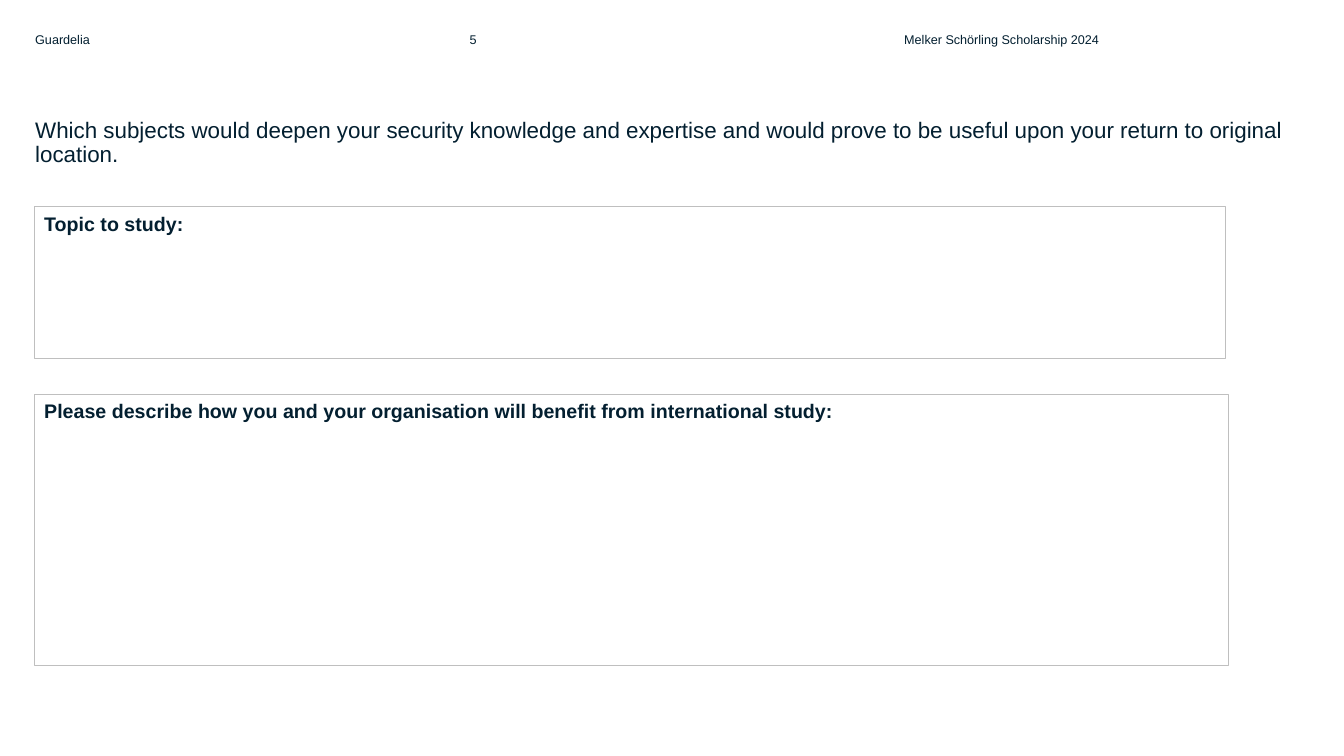
import pptx
import pptx.dml.color
import pptx.enum.shapes
import pptx.enum.text
import pptx.util

COLORS = {"ink": "031F30", "border": "BFBFBF"}
FONT = "Arial"
TITLE_ONLY = 5
HEADER_LEFT, HEADER_STEP = 2.62, 32.33
BOX_LEFT = 2.55


def color(name):
    return pptx.dml.color.RGBColor.from_string(COLORS[name])


def write(shape, text, size, bold=False, inset=(0, 0), wrap=True, line_spacing=None):
    """Fill a shape with one top-left paragraph; inset is (horizontal, vertical) in inches."""
    frame = shape.text_frame
    frame.auto_size = pptx.enum.text.MSO_AUTO_SIZE.NONE
    frame.word_wrap = wrap
    frame.vertical_anchor = pptx.enum.text.MSO_ANCHOR.TOP
    frame.margin_left = frame.margin_right = pptx.util.Inches(inset[0])
    frame.margin_top = frame.margin_bottom = pptx.util.Inches(inset[1])
    paragraph = frame.paragraphs[0]
    paragraph.alignment = pptx.enum.text.PP_ALIGN.LEFT
    if line_spacing:
        paragraph.line_spacing = line_spacing
    run = paragraph.add_run()
    run.text = text
    run.font.name = FONT
    run.font.size = pptx.util.Pt(size)
    run.font.bold = bold
    run.font.color.rgb = color("ink")


class FormSlide:
    """Adds form elements to one slide; lengths are percentages of the slide's size."""

    def __init__(self, presentation):
        self.width = presentation.slide_width
        self.height = presentation.slide_height
        self.slide = presentation.slides.add_slide(presentation.slide_layouts[TITLE_ONLY])

    def area(self, left, top, width, height):
        return (round(left * self.width / 100), round(top * self.height / 100),
                round(width * self.width / 100), round(height * self.height / 100))

    def title(self, text, *area):
        title = self.slide.shapes.title
        title.left, title.top, title.width, title.height = self.area(*area)
        write(title, text, size=16, line_spacing=0.9)

    def header(self, text, column, width, wrap=True):
        left = HEADER_LEFT + column * HEADER_STEP
        box = self.slide.shapes.add_textbox(*self.area(left, 4.27, width, 8.4))
        write(box, text, size=9, wrap=wrap)

    def answer_box(self, prompt, top, width, height):
        box = self.slide.shapes.add_shape(
            pptx.enum.shapes.MSO_SHAPE.RECTANGLE, *self.area(BOX_LEFT, top, width, height))
        box.shadow.inherit = False
        box.fill.background()
        box.line.color.rgb = color("border")
        box.line.width = pptx.util.Pt(0.75)
        write(box, prompt, size=14, bold=True, inset=(0.1, 0.05))


def main():
    presentation = pptx.Presentation()
    presentation.slide_width = pptx.util.Inches(13.33)
    presentation.slide_height = pptx.util.Inches(7.5)

    form = FormSlide(presentation)
    form.header("Guardelia", column=0, width=18.9, wrap=False)
    form.title("Which subjects would deepen your security knowledge and expertise and "
               "would prove to be useful upon your return to original location.",
               HEADER_LEFT, 15.73, 94.65, 8.8)
    form.header("5", column=1, width=6)
    form.answer_box("Topic to study:", top=27.33, width=88.65, height=20.13)
    form.answer_box("Please describe how you and your organisation will benefit from "
                    "international study:", top=52.13, width=88.88, height=35.87)
    form.header("Melker Schörling Scholarship 2024", column=2, width=22.05)

    presentation.save("out.pptx")


if __name__ == "__main__":
    main()
